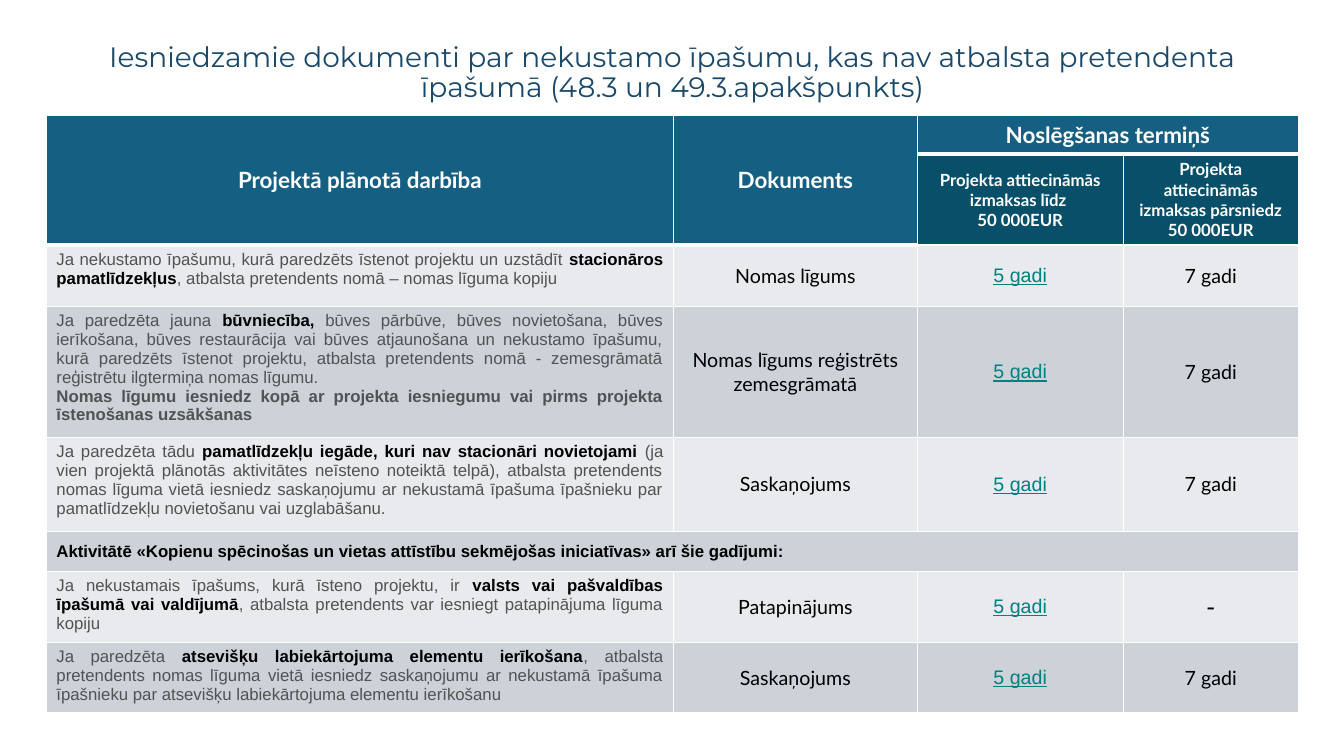
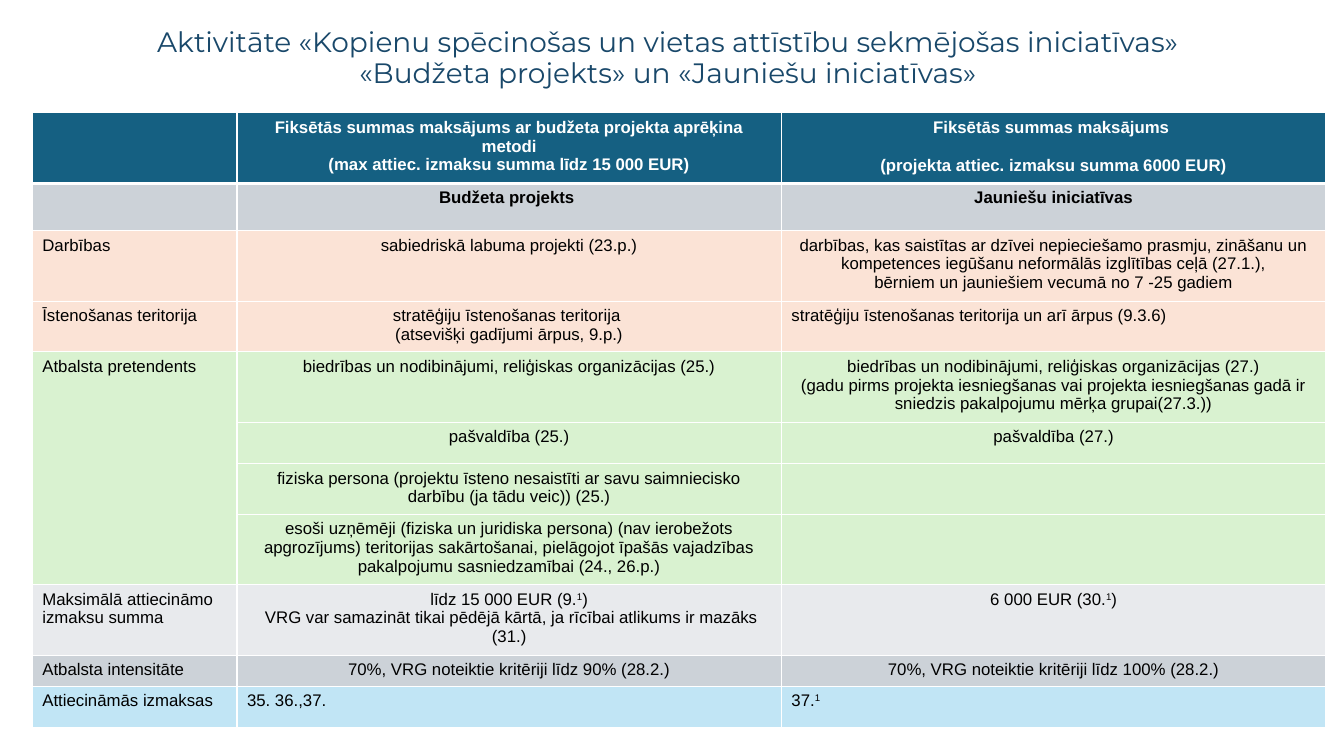
from dataclasses import dataclass, replace
from typing import NamedTuple, Optional

from lxml import etree
from pptx import Presentation
from pptx.dml.color import RGBColor
from pptx.enum.text import MSO_ANCHOR, PP_ALIGN
from pptx.oxml.ns import qn
from pptx.util import Inches, Pt

LEFT, CENTER, JUSTIFY = PP_ALIGN.LEFT, PP_ALIGN.CENTER, PP_ALIGN.JUSTIFY
TOP, MIDDLE = MSO_ANCHOR.TOP, MSO_ANCHOR.MIDDLE

# Colours
WHITE = RGBColor(0xFF, 0xFF, 0xFF)
BLACK = RGBColor(0x00, 0x00, 0x00)
NAVY = RGBColor(0x19, 0x48, 0x6A)
BLUE = RGBColor(0x15, 0x60, 0x82)
DEEP_BLUE = RGBColor(0x08, 0x4F, 0x6A)
LIGHT = RGBColor(0xE8, 0xEA, 0xED)
GREY = RGBColor(0xCC, 0xD2, 0xD8)
TEXT_GREY = RGBColor(0x52, 0x52, 0x52)
TEAL = RGBColor(0x00, 0x80, 0x80)
PEACH = RGBColor(0xFB, 0xE3, 0xD6)
GREEN = RGBColor(0xD9, 0xF2, 0xD0)
SKY = RGBColor(0xC1, 0xE5, 0xF5)


class Run(NamedTuple):
    text: str
    strong: bool = False
    superscript: bool = False


@dataclass(frozen=True)
class Style:
    font: str = "Arial"
    size: float = 12
    color: RGBColor = BLACK
    bold: bool = False
    underline: bool = False
    align: PP_ALIGN = CENTER
    anchor: MSO_ANCHOR = TOP
    line_spacing: float = 1.0
    gap: float = 0  # points before each paragraph after the first


@dataclass(frozen=True)
class Cell:
    paragraphs: tuple
    style: Style
    fill: RGBColor
    rows: int = 1
    cols: int = 1
    bottom: float = 1  # width of the bottom border in points


# Text styles
TITLE = Style("Montserrat", 20, NAVY, anchor=MIDDLE, line_spacing=0.9)
HEAD = Style("Lato", 16, WHITE, bold=True, anchor=MIDDLE)
SUBHEAD = replace(HEAD, size=12)
ACTION = Style(color=TEXT_GREY, align=JUSTIFY)
DOCUMENT = Style("Lato", 14, anchor=MIDDLE)
TERM_LINK = Style(size=14, color=TEAL, underline=True, anchor=MIDDLE)
SECTION = Style(bold=True, align=LEFT, anchor=MIDDLE)
BODY = Style()
BODY_LEFT = Style(align=LEFT)
BODY_BOLD = Style(bold=True)
BODY_HEAD = Style(color=WHITE, bold=True)


def strong(text: str) -> Run:
    return Run(text, strong=True)


def sup(text: str) -> Run:
    return Run(text, superscript=True)


def write(tf, paragraphs: tuple, style: Style) -> None:
    """Each paragraph is a string or a tuple of strings and runs."""
    tf.word_wrap = True
    for i, content in enumerate(paragraphs):
        p = tf.add_paragraph() if i else tf.paragraphs[0]
        p.alignment = style.align
        p.line_spacing = style.line_spacing
        if i and style.gap:
            p.space_before = Pt(style.gap)
        p.font.name, p.font.size = style.font, Pt(style.size)
        p.font.bold, p.font.underline = style.bold, style.underline
        p.font.color.rgb = style.color
        for part in (content,) if isinstance(content, (str, Run)) else content:
            part = Run(part) if isinstance(part, str) else part
            r = p.add_run()
            r.text = part.text
            if part.strong:
                r.font.bold = True
                r.font.color.rgb = style.color if len(p.runs) == 1 else BLACK
            if part.superscript:
                r._r.get_or_add_rPr().set("baseline", "30000")


def add_title(slide, top: float, width: float, height: float, *lines: str) -> None:
    sp = slide.shapes.add_textbox(Inches(0.92), Inches(top), Inches(width), Inches(height))
    sp.text_frame.vertical_anchor = TITLE.anchor
    write(sp.text_frame, lines, TITLE)


def set_borders(cell, bottom: float) -> None:
    tc_pr = cell._tc.get_or_add_tcPr()
    for side, width in (("L", 1), ("R", 1), ("T", 1), ("B", bottom)):
        ln = etree.SubElement(tc_pr, qn(f"a:ln{side}"), w=str(Pt(width)))
        fill = etree.SubElement(ln, qn("a:solidFill"))
        etree.SubElement(fill, qn("a:srgbClr"), val=str(WHITE))


def add_grid(slide, left: float, top: float, widths: list[float],
             heights: list[float], rows: list[list[Optional[Cell]]]) -> None:
    """Draw a table; None marks a place covered by a merged cell."""
    table = slide.shapes.add_table(
        len(heights), len(widths), Inches(left), Inches(top),
        Inches(sum(widths)), Inches(sum(heights))).table
    for column, width in zip(table.columns, widths):
        column.width = Inches(width)
    for row, height in zip(table.rows, heights):
        row.height = Inches(height)
    for y, row in enumerate(rows):
        for x, item in enumerate(row):
            if item is None:
                continue
            cell = table.cell(y, x)
            if item.rows > 1 or item.cols > 1:
                cell.merge(table.cell(y + item.rows - 1, x + item.cols - 1))
            for dy in range(item.rows):
                for dx in range(item.cols):
                    part = table.cell(y + dy, x + dx)
                    set_borders(part, item.bottom)
                    part.fill.solid()
                    part.fill.fore_color.rgb = item.fill
            cell.vertical_anchor = item.style.anchor
            write(cell.text_frame, item.paragraphs or ("",), item.style)


def lease_row(fill: RGBColor, action: tuple, document: str,
              long_term: str = "7 gadi", size: float = 14) -> list[Cell]:
    return [
        Cell(action, ACTION, fill),
        Cell((document,), DOCUMENT, fill),
        Cell(("5 gadi",), TERM_LINK, fill),
        Cell((long_term,), replace(DOCUMENT, size=size), fill),
    ]


def support_row(fill: RGBColor, label: Optional[str], budget: tuple, youth: tuple,
                style: Style = BODY, youth_style: Style = BODY,
                label_rows: int = 1) -> list[Optional[Cell]]:
    first = None if label is None else Cell((label,), BODY_LEFT, fill, rows=label_rows)
    return [first, Cell(budget, style, fill), Cell(youth, youth_style, fill)]


def build_documents(slide) -> None:
    add_title(slide, 0, 11.5, 1.45,
              "Iesniedzamie dokumenti par nekustamo īpašumu, kas nav atbalsta pretendenta "
              "īpašumā (48.3 un 49.3.apakšpunkts)")
    rows = [
        [Cell(("Projektā plānotā darbība",), HEAD, BLUE, rows=2, bottom=3),
         Cell(("Dokuments",), HEAD, BLUE, rows=2, bottom=3),
         Cell(("Noslēgšanas termiņš",), HEAD, BLUE, cols=2, bottom=3), None],
        [None, None,
         Cell(("Projekta attiecināmās izmaksas līdz ", "50 000EUR"), SUBHEAD, DEEP_BLUE),
         Cell(("Projekta attiecināmās izmaksas pārsniedz 50 000EUR",), SUBHEAD, DEEP_BLUE)],
        lease_row(LIGHT, ((
            "Ja nekustamo īpašumu, kurā paredzēts īstenot projektu un uzstādīt ",
            strong("stacionāros pamatlīdzekļus"),
            ", atbalsta pretendents nomā – nomas līguma kopiju"),), "Nomas līgums"),
        lease_row(GREY, ((
            "Ja paredzēta jauna ", strong("būvniecība, "),
            "būves pārbūve, būves novietošana, būves ierīkošana, būves restaurācija vai "
            "būves atjaunošana un nekustamo īpašumu, kurā paredzēts īstenot projektu, "
            "atbalsta pretendents nomā - zemesgrāmatā reģistrētu ilgtermiņa nomas līgumu."),
            strong("Nomas līgumu iesniedz kopā ar projekta iesniegumu vai pirms projekta "
                   "īstenošanas uzsākšanas")), "Nomas līgums reģistrēts zemesgrāmatā"),
        lease_row(LIGHT, ((
            "Ja paredzēta tādu ",
            strong("pamatlīdzekļu iegāde, kuri nav stacionāri novietojami "),
            "(ja vien projektā plānotās aktivitātes neīsteno noteiktā telpā), atbalsta "
            "pretendents nomas līguma vietā iesniedz saskaņojumu ar nekustamā īpašuma "
            "īpašnieku par pamatlīdzekļu novietošanu vai uzglabāšanu."),), "Saskaņojums"),
        [Cell(("Aktivitātē «Kopienu spēcinošas un vietas attīstību sekmējošas iniciatīvas» "
               "arī šie gadījumi:",), SECTION, GREY, cols=4), None, None, None],
        lease_row(LIGHT, ((
            "Ja nekustamais īpašums, kurā īsteno projektu, ir ",
            strong("valsts vai pašvaldības īpašumā vai valdījumā"),
            ", atbalsta pretendents var iesniegt patapinājuma līguma kopiju"),),
            "Patapinājums", "-", 18),
        lease_row(GREY, ((
            "Ja paredzēta ", strong("atsevišķu labiekārtojuma elementu ierīkošana"),
            ", atbalsta pretendents nomas līguma vietā iesniedz saskaņojumu ar nekustamā "
            "īpašuma īpašnieku par atsevišķu labiekārtojuma elementu ierīkošanu"),),
            "Saskaņojums"),
    ]
    add_grid(slide, 0.46, 1.14, [6.22, 2.42, 2.04, 1.74],
             [0.39, 0.9, 0.61, 1.3, 0.93, 0.4, 0.7, 0.7], rows)


def build_support(slide) -> None:
    add_title(slide, 0.4, 11.41, 0.37,
              "Aktivitāte «Kopienu spēcinošas un vietas attīstību sekmējošas iniciatīvas»",
              "«Budžeta projekts» un «Jauniešu iniciatīvas»")
    rows = [
        [Cell((), BODY_HEAD, BLUE, bottom=3),
         Cell(("Fiksētās summas maksājums ar budžeta projekta aprēķina metodi",
               "(max attiec. izmaksu summa līdz 15 000 EUR)"), BODY_HEAD, BLUE, bottom=3),
         Cell(("Fiksētās summas maksājums ", "(projekta attiec. izmaksu summa 6000 EUR)"),
              replace(BODY_HEAD, gap=13.8), BLUE, bottom=3)],
        support_row(GREY, "", ("Budžeta projekts ",), ("Jauniešu iniciatīvas",),
                    BODY_BOLD, BODY_BOLD),
        support_row(PEACH, "Darbības", ("sabiedriskā labuma projekti (23.p.)",),
                    ("darbības, kas saistītas ar dzīvei nepieciešamo prasmju, zināšanu un "
                     "kompetences iegūšanu neformālās izglītības ceļā (27.1.),",
                     "bērniem un jauniešiem vecumā no 7 -25 gadiem")),
        support_row(PEACH, "Īstenošanas teritorija",
                    ("stratēģiju īstenošanas teritorija ", "(atsevišķi gadījumi ārpus, 9.p.)"),
                    ("stratēģiju īstenošanas teritorija un arī ārpus (9.3.6)",),
                    youth_style=BODY_LEFT),
        support_row(GREEN, "Atbalsta pretendents",
                    ("biedrības un nodibinājumi, reliģiskas organizācijas (25.)",),
                    ("biedrības un nodibinājumi, reliģiskas organizācijas (27.)",
                     "(gadu pirms projekta iesniegšanas vai projekta iesniegšanas gadā ir "
                     "sniedzis pakalpojumu mērķa grupai(27.3.))"), label_rows=4),
        support_row(GREEN, None, ("pašvaldība (25.)",), ("pašvaldība (27.)",)),
        support_row(GREEN, None,
                    ("fiziska persona (projektu īsteno nesaistīti ar savu saimniecisko "
                     "darbību (ja tādu veic)) (25.)",), ()),
        support_row(GREEN, None,
                    ("esoši uzņēmēji (fiziska un juridiska persona) (nav ierobežots "
                     "apgrozījums) teritorijas sakārtošanai, pielāgojot īpašās vajadzības "
                     "pakalpojumu sasniedzamībai (24., 26.p.)",), ()),
        support_row(LIGHT, "Maksimālā attiecināmo izmaksu summa",
                    (("līdz 15 000 EUR (9.", sup("1"), ")"),
                     " VRG var samazināt tikai pēdējā kārtā, ja rīcībai atlikums ir mazāks (31.)"),
                    (("6 000 EUR (30.", sup("1"), ")"),)),
        support_row(GREY, "Atbalsta intensitāte",
                    ("70%, VRG noteiktie kritēriji līdz 90% (28.2.)",),
                    ("70%, VRG noteiktie kritēriji līdz 100% (28.2.)",)),
        support_row(SKY, "Attiecināmās izmaksas", ("35. 36.,37.",), (("37.", sup("1")),),
                    BODY_LEFT, BODY_LEFT),
    ]
    add_grid(slide, 0.32, 1.12, [2.03, 5.4, 5.4],
             [0.66, 0.47, 0.66, 0.47, 0.66, 0.41, 0.47, 0.66, 0.66, 0.31, 0.41], rows)


def main() -> None:
    prs = Presentation()
    prs.slide_width, prs.slide_height = Inches(13.33), Inches(7.5)
    for build in (build_documents, build_support):
        build(prs.slides.add_slide(prs.slide_layouts[6]))
    prs.save("out.pptx")


if __name__ == "__main__":
    main()
